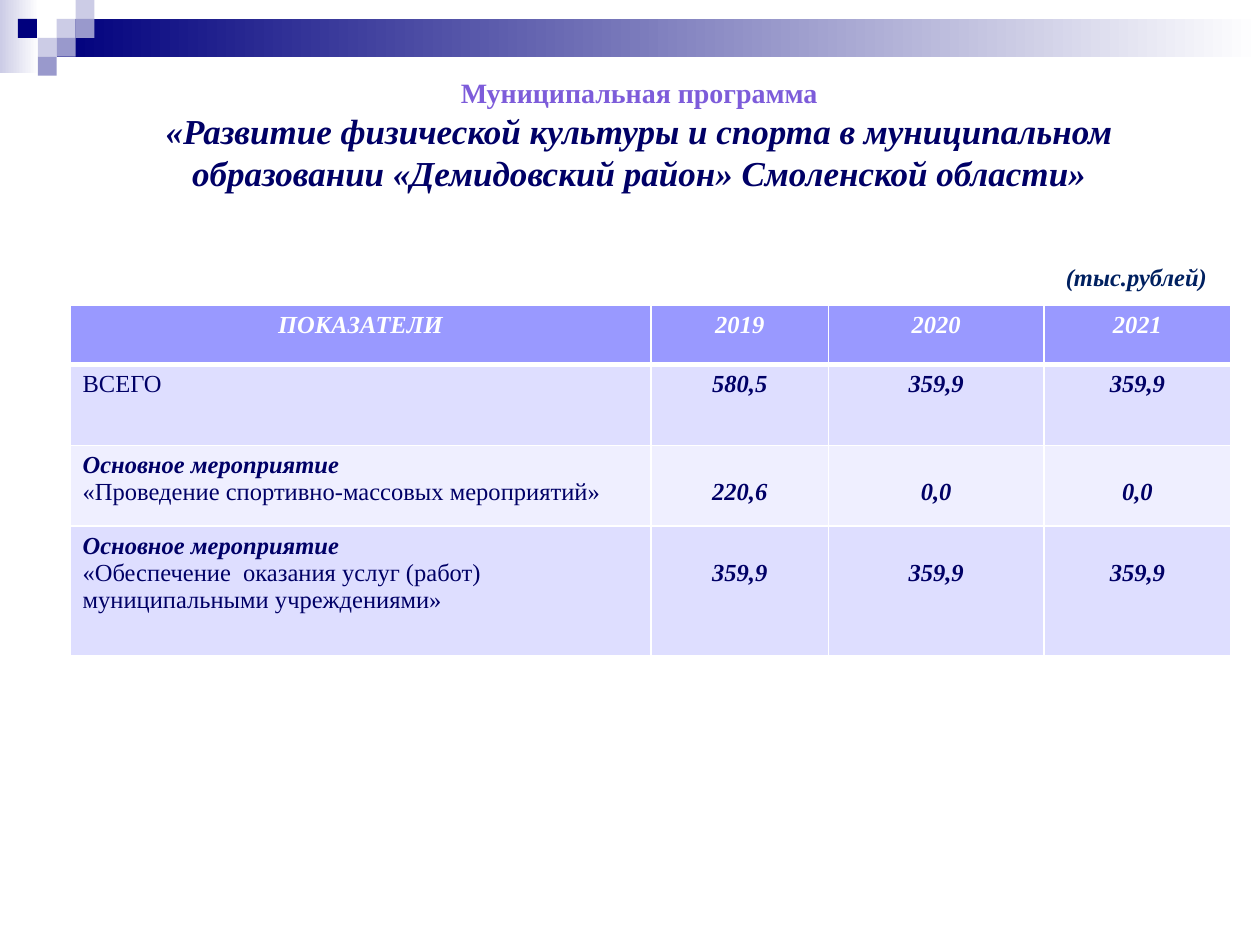
from lxml import etree
from pptx import Presentation
from pptx.dml.color import RGBColor
from pptx.enum import shapes, text
from pptx.oxml import ns
from pptx.util import Pt

WHITE = RGBColor(0xFF, 0xFF, 0xFF)
NAVY = RGBColor(0x00, 0x00, 0x7D)
INK = RGBColor(0x00, 0x00, 0x66)
UNIT_BLUE = RGBColor(0x00, 0x20, 0x60)
VIOLET = RGBColor(0x7D, 0x5C, 0xDA)
LIGHT_SQUARE = RGBColor(0xCC, 0xCC, 0xE6)
MID_SQUARE = RGBColor(0x99, 0x99, 0xCC)
HEADER_FILL = RGBColor(0x99, 0x99, 0xFF)
ODD_FILL = RGBColor(0xDE, 0xDE, 0xFF)
EVEN_FILL = RGBColor(0xEF, 0xEF, 0xFF)

FONT = "Times New Roman"
CENTER = text.PP_ALIGN.CENTER
LEFT = text.PP_ALIGN.LEFT
MEASURE = "Основное мероприятие"
LINE_HEIGHT = 15.5

HEADER = ["ПОКАЗАТЕЛИ", "2019", "2020", "2021"]
# Label lines, values for each year
ROWS = [
    (["ВСЕГО"], ["580,5", "359,9", "359,9"]),
    ([MEASURE, "«Проведение спортивно-массовых мероприятий»"],
     ["220,6", "0,0", "0,0"]),
    ([MEASURE, "«Обеспечение  оказания услуг (работ) муниципальными учреждениями»"],
     ["359,9", "359,9", "359,9"]),
]


def write(frame, content, size=14, color=INK, bold=True, italic=True, align=CENTER):
    """Write one paragraph, using the first one while it is still empty."""
    paragraph = frame.paragraphs[-1]
    if paragraph.runs:
        paragraph = frame.add_paragraph()
    paragraph.alignment = align
    run = paragraph.add_run()
    run.text = content
    font = run.font
    font.name, font.size, font.color.rgb = FONT, Pt(size), color
    font.bold, font.italic = bold, italic


def add_rectangle(slide, left, top, width, height, color, fade=False):
    shape = slide.shapes.add_shape(
        shapes.MSO_SHAPE.RECTANGLE, Pt(left), Pt(top), Pt(width), Pt(height))
    shape.shadow.inherit = False
    shape.line.fill.background()
    if fade:
        shape.fill.gradient()
        shape.fill.gradient_angle = 0
        for stop, stop_color in zip(shape.fill.gradient_stops, (color, WHITE)):
            stop.color.rgb = stop_color
    else:
        shape.fill.solid()
        shape.fill.fore_color.rgb = color


def add_banner(slide, left, top, width):
    """Fading bars with a checker of small squares at the left end."""
    side = 10.8
    add_rectangle(slide, left, top, 22.3, 41.8, LIGHT_SQUARE, fade=True)
    add_rectangle(slide, left + 3 * side, top + side, width - 3 * side, 2 * side,
                  NAVY, fade=True)
    squares = [(3, 1, LIGHT_SQUARE), (4, 0, LIGHT_SQUARE), (4, 1, MID_SQUARE),
               (2, 2, LIGHT_SQUARE), (0.95, 1, NAVY), (3, 2, MID_SQUARE),
               (2, 3, MID_SQUARE)]
    for column, row, color in squares:
        add_rectangle(slide, left + column * side, top + row * side, side, side, color)


def add_text_box(slide, left, top, width, height, wrap=True):
    frame = slide.shapes.add_textbox(Pt(left), Pt(top), Pt(width), Pt(height)).text_frame
    frame.word_wrap = wrap
    frame.auto_size = text.MSO_AUTO_SIZE.SHAPE_TO_FIT_TEXT
    return frame


def add_title(slide, left, top, width, height):
    frame = add_text_box(slide, left, top, width, height)
    write(frame, "Муниципальная программа", size=16, color=VIOLET, italic=False)
    write(frame, "«Развитие физической культуры и спорта в муниципальном "
                 "образовании «Демидовский район» Смоленской области»", size=20)


def add_unit_label(slide, left, top, width, height):
    frame = add_text_box(slide, left, top, width, height, wrap=False)
    write(frame, "(тыс.рублей)", color=UNIT_BLUE, align=LEFT)


def style_cell(cell, fill, top_width=1, bottom_width=1):
    """Set white borders first, as the schema puts them before the fill."""
    properties = cell._tc.get_or_add_tcPr()
    for side, width in zip("LRTB", (1, 1, top_width, bottom_width)):
        line = etree.SubElement(properties, ns.qn("a:ln" + side), w=str(Pt(width)))
        solid = etree.SubElement(line, ns.qn("a:solidFill"))
        etree.SubElement(solid, ns.qn("a:srgbClr"), val=str(WHITE))
    cell.fill.solid()
    cell.fill.fore_color.rgb = fill


def add_budget_table(slide, left, top, width, height):
    column_widths = [332, 101.5, 123, width - 556.5]
    row_heights = [34, 46.2, 46.2, height - 126.4]
    table = slide.shapes.add_table(
        len(row_heights), len(column_widths),
        Pt(left), Pt(top), Pt(width), Pt(height)).table
    for column, column_width in zip(table.columns, column_widths):
        column.width = Pt(column_width)
    for row, row_height in zip(table.rows, row_heights):
        row.height = Pt(row_height)

    # Header row
    for index, heading in enumerate(HEADER):
        cell = table.cell(0, index)
        style_cell(cell, HEADER_FILL, bottom_width=3)
        write(cell.text_frame, heading, color=WHITE)

    # Body rows: values stand level with the last label heading's next line
    for number, (labels, values) in enumerate(ROWS, start=1):
        fill = ODD_FILL if number % 2 else EVEN_FILL
        top_width = 3 if number == 1 else 1
        label_cell = table.cell(number, 0)
        style_cell(label_cell, fill, top_width)
        for label in labels:
            strong = label == MEASURE
            write(label_cell.text_frame, label, bold=strong, italic=strong, align=LEFT)
        for index, value in enumerate(values, start=1):
            cell = table.cell(number, index)
            style_cell(cell, fill, top_width)
            cell.margin_top = Pt(3.6 + LINE_HEIGHT * (len(labels) - 1))
            write(cell.text_frame, value)


def main():
    presentation = Presentation()
    presentation.slide_width, presentation.slide_height = Pt(720), Pt(540)
    slide = presentation.slides.add_slide(presentation.slide_layouts[6])
    add_banner(slide, 0, 0, 720)
    add_title(slide, 56, 39.6, 618.5, 75)
    add_budget_table(slide, 40, 174.3, 663.5, 200.5)
    add_unit_label(slide, 602, 146.2, 95.8, 24.5)
    presentation.save("out.pptx")


if __name__ == "__main__":
    main()
